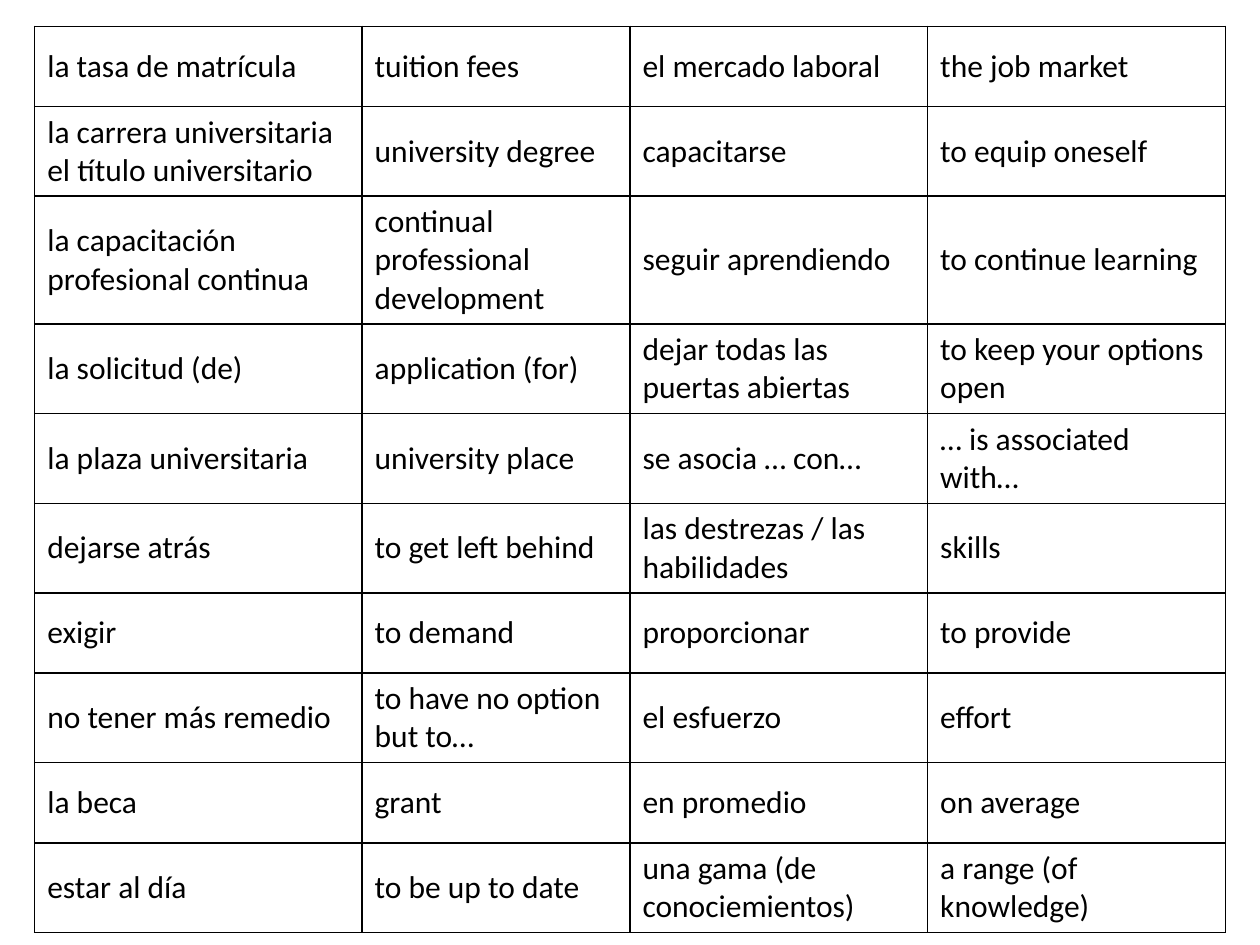
from lxml.etree import SubElement
from pptx import Presentation
from pptx.dml.color import RGBColor
from pptx.enum.text import MSO_ANCHOR
from pptx.oxml.ns import qn
from pptx.util import Cm, Pt

# Spanish term, English meaning, twice per row
VOCABULARY = [
    ("la tasa de matrícula", "tuition fees", "el mercado laboral", "the job market"),
    ("la carrera universitaria\vel título universitario", "university degree",
     "capacitarse", "to equip oneself"),
    ("la capacitación profesional continua", "continual professional development",
     "seguir aprendiendo", "to continue learning"),
    ("la solicitud (de)", "application (for)",
     "dejar todas las puertas abiertas", "to keep your options open"),
    ("la plaza universitaria", "university place",
     "se asocia … con…", "… is associated with…"),
    ("dejarse atrás", "to get left behind", "las destrezas / las habilidades", "skills"),
    ("exigir", "to demand", "proporcionar", "to provide"),
    ("no tener más remedio", "to have no option but to…", "el esfuerzo", "effort"),
    ("la beca", "grant", "en promedio", "on average"),
    ("estar al día", "to be up to date",
     "una gama (de conociemientos)", "a range (of knowledge)"),
]
COLUMN_WIDTHS = [6.6, 5.4, 6, 6]
ROW_HEIGHT, TALL_ROW_HEIGHT = 1.62, 2.29
TALL_ROW = 2


def color(value):
    return RGBColor.from_string(value)


class SlideBuilder:
    font_name = "Calibri"
    font_size = Pt(18)
    ink = "000000"
    border_width = Pt(1)

    def __init__(self, slide):
        self.slide = slide

    def table(self, left, top, widths, heights, rows):
        frame = self.slide.shapes.add_table(
            len(rows), len(widths), Cm(left), Cm(top), Cm(sum(widths)), Cm(sum(heights)))
        table = frame.table
        table.first_row = table.horz_banding = False
        for column, width in zip(table.columns, widths):
            column.width = Cm(width)
        for row, height, texts in zip(table.rows, heights, rows):
            row.height = Cm(height)
            for cell, text in zip(row.cells, texts):
                self.cell(cell, text)

    def cell(self, cell, text):
        cell.vertical_anchor = MSO_ANCHOR.MIDDLE
        cell.text_frame.text = text
        for para in cell.text_frame.paragraphs:
            for span in para.runs:
                span.font.name = self.font_name
                span.font.size = self.font_size
                span.font.color.rgb = color(self.ink)
        # Borders come before the fill in the cell properties
        self.borders(cell)
        cell.fill.background()

    def borders(self, cell):
        properties = cell._tc.get_or_add_tcPr()
        for side in ("a:lnL", "a:lnR", "a:lnT", "a:lnB"):
            line = SubElement(properties, qn(side), w=str(self.border_width))
            fill = SubElement(line, qn("a:solidFill"))
            SubElement(fill, qn("a:srgbClr"), val=self.ink)


def main():
    deck = Presentation()
    deck.slide_width, deck.slide_height = Cm(25.4), Cm(19.05)
    page = SlideBuilder(deck.slides.add_slide(deck.slide_layouts[6]))

    # Vocabulary table
    heights = [ROW_HEIGHT] * len(VOCABULARY)
    heights[TALL_ROW] = TALL_ROW_HEIGHT
    page.table(0.7, 0.53, COLUMN_WIDTHS, heights, VOCABULARY)

    deck.save("out.pptx")


if __name__ == "__main__":
    main()
